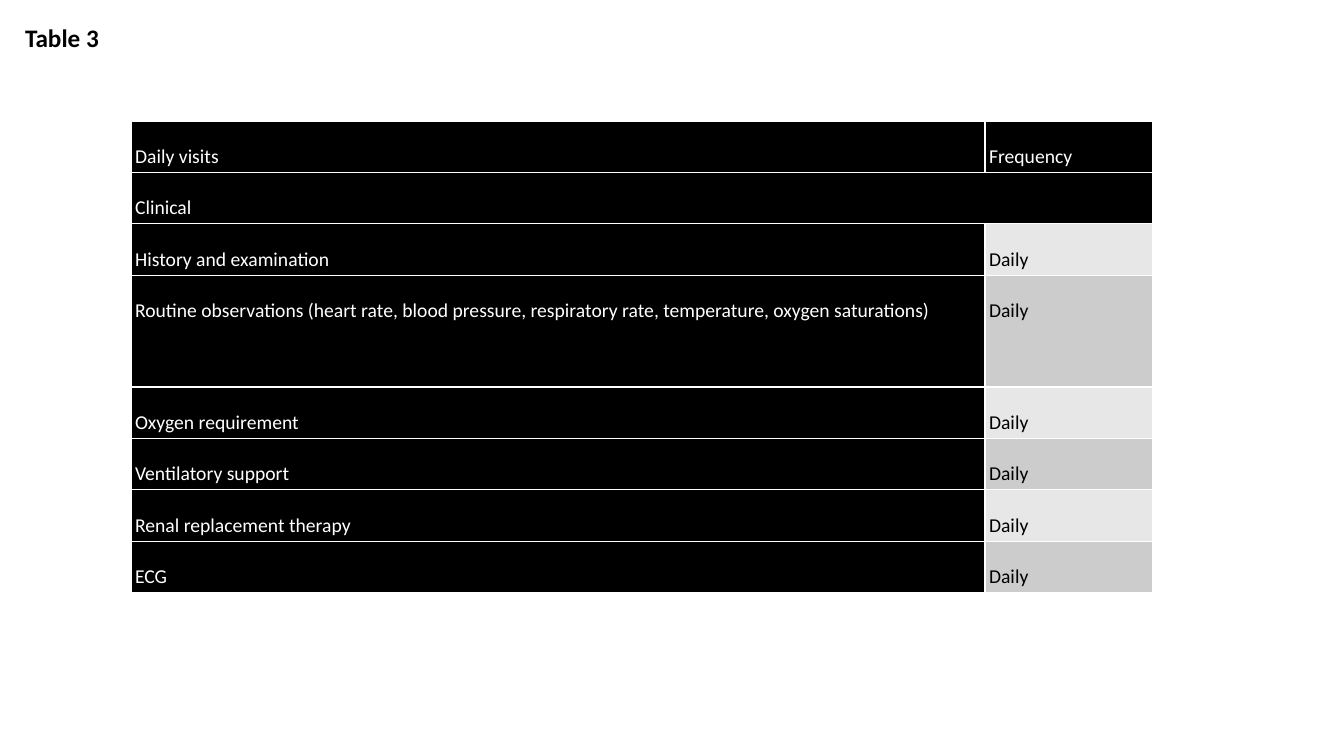
"""Build the slide with the table of daily visits and their frequency."""
from lxml import etree
from pptx import Presentation
from pptx.dml.color import RGBColor
from pptx.enum.text import MSO_AUTO_SIZE
from pptx.oxml.ns import qn
from pptx.util import Inches, Pt

BLACK = RGBColor(0, 0, 0)
WHITE = RGBColor(255, 255, 255)
LIGHT = RGBColor(0xE7, 0xE7, 0xE7)
GREY = RGBColor(0xCC, 0xCC, 0xCC)
FIT = MSO_AUTO_SIZE.SHAPE_TO_FIT_TEXT


def write(frame, text, size=14, color=BLACK, bold=False, space=1.0):
    par = frame.paragraphs[0]
    par.line_spacing = space
    run = par.add_run()
    run.text = text
    run.font.name = "Calibri"
    run.font.size = Pt(size)
    run.font.bold = bold
    run.font.color.rgb = color


def style(cell, fill):
    cell.margin_left = cell.margin_right = Inches(0.04)
    cell.margin_top = cell.margin_bottom = 0
    props = cell._tc.get_or_add_tcPr()
    for side in ("a:lnL", "a:lnR", "a:lnT", "a:lnB"):
        line = etree.SubElement(props, qn(side), w=str(Pt(1)))
        solid = etree.SubElement(line, qn("a:solidFill"))
        etree.SubElement(solid, qn("a:srgbClr"), val=str(WHITE))
    cell.fill.solid()
    cell.fill.fore_color.rgb = fill


deck = Presentation()
deck.slide_width = Inches(13.33)
deck.slide_height = Inches(7.5)
slide = deck.slides.add_slide(deck.slide_layouts[6])

visits = [
    ("Daily visits", "Frequency"),
    ("Clinical", ""),
    ("History and examination", "Daily"),
    ("Routine observations (heart rate, blood pressure, respiratory rate, "
     "temperature, oxygen saturations)", "Daily"),
    ("Oxygen requirement", "Daily"),
    ("Ventilatory support", "Daily"),
    ("Renal replacement therapy", "Daily"),
    ("ECG", "Daily"),
]
heads = 2
tall = 3

table = slide.shapes.add_table(
    len(visits), 2, Inches(1.3), Inches(1.2), Inches(10.13), Inches(4.68)
).table
table.columns[0].width = Inches(8.47)
table.columns[1].width = Inches(1.66)

for row, pair in enumerate(visits):
    table.rows[row].height = Inches(1.11 if row == tall else 0.51)
    for col, text in enumerate(pair):
        cell = table.cell(row, col)
        dark = col == 0 or row < heads
        shade = GREY if row % 2 else LIGHT
        style(cell, BLACK if dark else shade)
        if text:
            write(cell.text_frame, text, color=WHITE if dark else BLACK, space=2.0)

table.cell(1, 0).merge(table.cell(1, 1))

title = slide.shapes.add_textbox(Inches(0.15), Inches(0.17), Inches(0.94), Inches(0.4))
title.text_frame.word_wrap = False
title.text_frame.auto_size = FIT
write(title.text_frame, "Table 3", size=18, bold=True)

deck.save("out.pptx")
